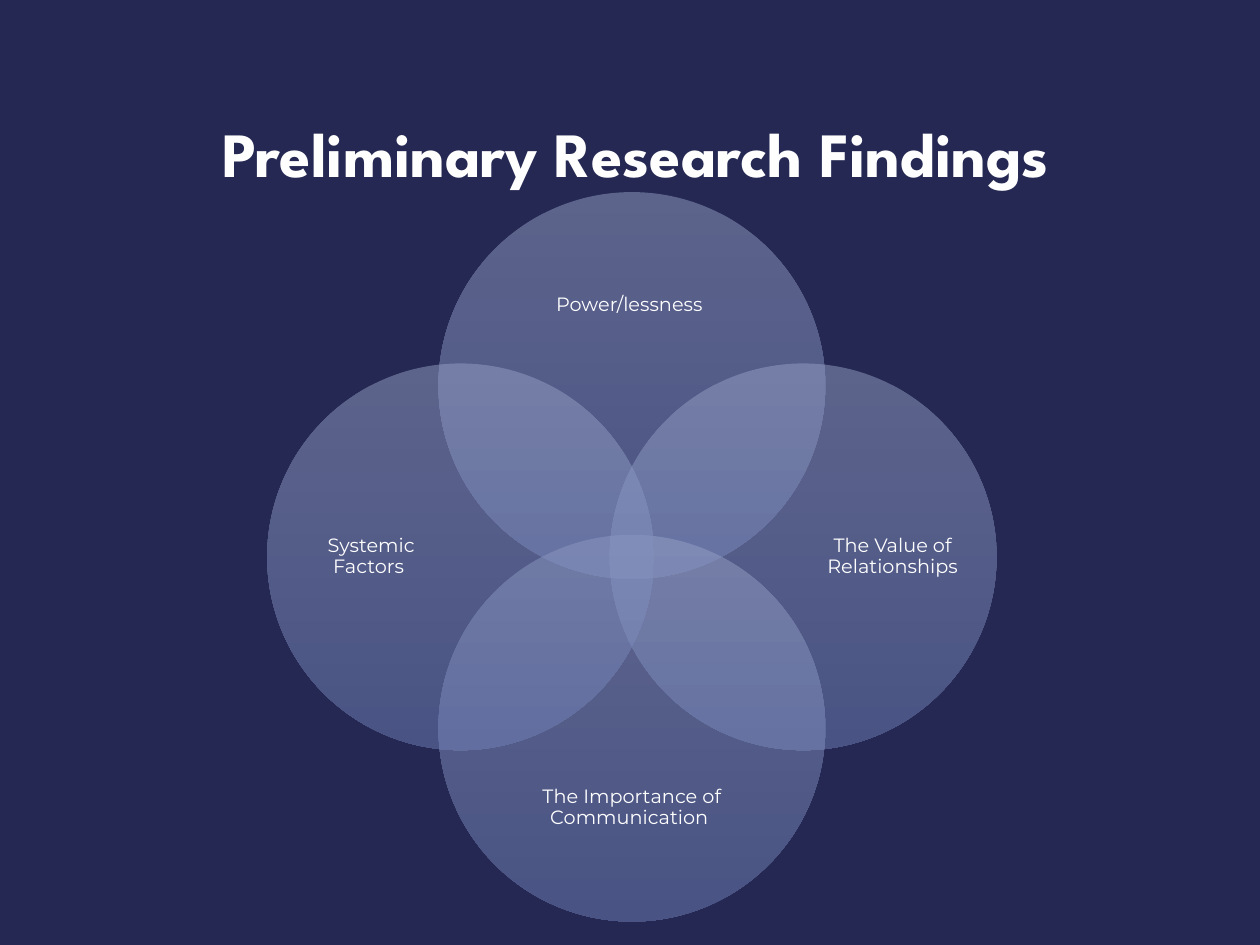
from lxml.etree import SubElement
from pptx import Presentation
from pptx.dml.color import RGBColor
from pptx.enum.shapes import MSO_SHAPE
from pptx.enum.text import MSO_ANCHOR, PP_ALIGN
from pptx.oxml import parse_xml
from pptx.oxml.ns import nsdecls, qn
from pptx.util import Pt

COLORS = {
    "background": "242852",
    "title": "FEFEFE",
    "label": "FFFFFF",
    "circle_top": "95A0C6",
    "circle_bottom": "7181B7",
    "shadow": "000000",
}
CENTER_X, CENTER_Y = 361.1, 318.2
DIAMETER = 221
CIRCLE_OFFSET = 97.9
LABEL_OFFSET_X, LABEL_OFFSET_Y = 149, 143.5
LABEL_LONG, LABEL_SHORT_X, LABEL_SHORT_Y = 170, 85, 70

FINDINGS = [
    ("Power/lessness ", 0, -1),
    ("The Value of Relationships", 1, 0),
    ("The Importance of Communication ", 0, 1),
    ("Systemic Factors ", -1, 0),
]


def rgb(name):
    return RGBColor.from_string(COLORS[name])


class VennSlide:
    title_font = "League Spartan"
    label_font = "Montserrat"

    def __init__(self, deck):
        self.slide = deck.slides.add_slide(deck.slide_layouts[5])
        backdrop = self.slide.background.fill
        backdrop.solid()
        backdrop.fore_color.rgb = rgb("background")

    def format_text(self, frame, anchor, font_name, size, color, bold=False):
        frame.word_wrap = True
        frame.vertical_anchor = anchor
        paragraph = frame.paragraphs[0]
        paragraph.alignment = PP_ALIGN.CENTER
        font = paragraph.runs[0].font
        font.name, font.size, font.bold = font_name, Pt(size), bold
        font.color.rgb = rgb(color)
        return paragraph

    def title(self, text, left, top, width, height):
        heading = self.slide.shapes.title
        heading.left, heading.top = Pt(left), Pt(top)
        heading.width, heading.height = Pt(width), Pt(height)
        heading.text_frame.text = text
        paragraph = self.format_text(heading.text_frame, MSO_ANCHOR.BOTTOM,
                                     self.title_font, 36, "title", True)
        shadow = parse_xml(
            f'<a:effectLst {nsdecls("a")}>'
            '<a:outerShdw blurRad="50800" dist="38100" dir="2700000" algn="tl">'
            f'<a:srgbClr val="{COLORS["shadow"]}"><a:alpha val="48000"/></a:srgbClr>'
            '</a:outerShdw></a:effectLst>')
        paragraph.runs[0]._r.rPr.find(qn("a:solidFill")).addnext(shadow)

    def circle(self, center_x, center_y):
        radius = DIAMETER / 2
        disc = self.slide.shapes.add_shape(
            MSO_SHAPE.OVAL, Pt(center_x - radius), Pt(center_y - radius),
            Pt(DIAMETER), Pt(DIAMETER))
        disc.shadow.inherit = False
        disc.line.fill.background()
        disc.fill.gradient()
        disc.fill.gradient_angle = 270
        for stop, name in zip(disc.fill.gradient_stops, ("circle_top", "circle_bottom")):
            stop.color.rgb = rgb(name)
        for tone in disc._element.spPr.iter(qn("a:srgbClr")):
            SubElement(tone, qn("a:alpha"), val="50000")

    def label(self, text, center_x, center_y, width, height):
        box = self.slide.shapes.add_textbox(
            Pt(center_x - width / 2), Pt(center_y - height / 2), Pt(width), Pt(height))
        frame = box.text_frame
        frame.margin_left = frame.margin_right = frame.margin_top = frame.margin_bottom = 0
        frame.text = text
        paragraph = self.format_text(frame, MSO_ANCHOR.MIDDLE, self.label_font, 11, "label")
        paragraph.line_spacing = 0.9


def main():
    deck = Presentation()
    deck.slide_width, deck.slide_height = Pt(720), Pt(540)
    venn = VennSlide(deck)
    venn.title("Preliminary Research Findings ", 111, 21, 514, 91.5)
    for finding, across, down in FINDINGS:
        venn.circle(CENTER_X + across * CIRCLE_OFFSET, CENTER_Y + down * CIRCLE_OFFSET)
        width, height = (LABEL_SHORT_X, LABEL_LONG) if across else (LABEL_LONG, LABEL_SHORT_Y)
        venn.label(finding, CENTER_X + across * LABEL_OFFSET_X,
                   CENTER_Y + down * LABEL_OFFSET_Y, width, height)
    deck.save("out.pptx")


if __name__ == "__main__":
    main()
